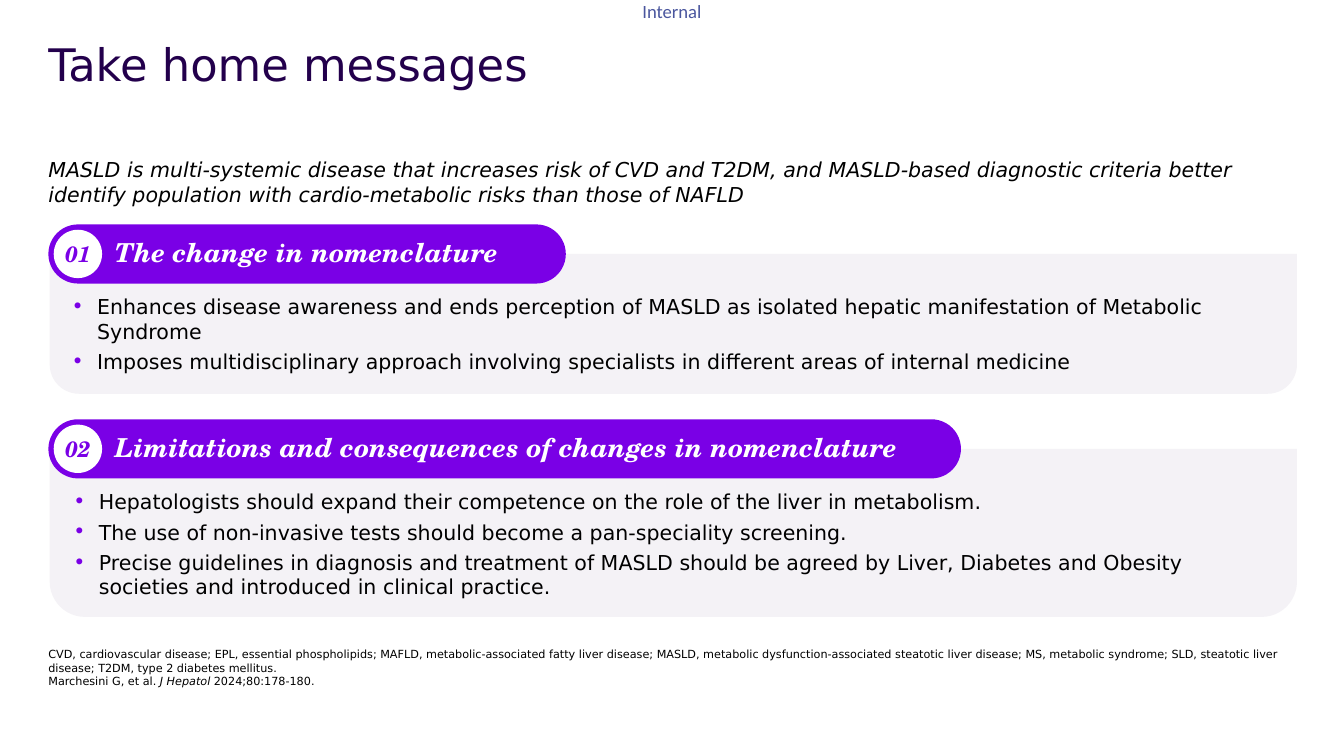
from lxml import etree
from pptx import Presentation
from pptx import util as u
from pptx.dml.color import RGBColor
from pptx.enum import shapes, text
from pptx.oxml import ns

THEME = {
    "purple": "7A00E6", "panel": "F4F2F6", "white": "FFFFFF",
    "title": {"name": "DejaVu Sans", "size": 24, "color": "23004C"},
    "label": {"name": "Calibri", "size": 10, "color": "4A569E"},
    "body": {"name": "DejaVu Sans", "size": 11, "color": "000000"},
    "note": {"name": "DejaVu Sans", "size": 6, "color": "000000"},
    "heading": {"name": "TeX Gyre Schola", "size": 14, "color": "FFFFFF", "bold": True, "italic": True},
    "number": {"name": "TeX Gyre Schola", "size": 12, "color": "7A00E6", "bold": True, "italic": True},
}


def write_text(shape, paragraphs, style, insets=(0, 0, 0, 0), anchor=text.MSO_ANCHOR.TOP,
               bullet=None, **paragraph_format):
    """Fill a shape with paragraphs, each a list of (words, run font values)."""
    frame = shape.text_frame
    frame.word_wrap, frame.auto_size = True, text.MSO_AUTO_SIZE.NONE
    frame.vertical_anchor = anchor
    for side, inset in zip(("left", "top", "right", "bottom"), insets):
        setattr(frame, f"margin_{side}", u.Inches(inset))
    for index, runs in enumerate(paragraphs):
        paragraph = frame.add_paragraph() if index else frame.paragraphs[0]
        values = {"alignment": text.PP_ALIGN.LEFT, "space_before": u.Pt(0), "space_after": u.Pt(0)}
        values.update(paragraph_format)
        for name, value in values.items():
            setattr(paragraph, name, value)
        # Bullet and hanging indent
        properties = paragraph._p.get_or_add_pPr()
        indent = u.Inches(0.19) if bullet else 0
        properties.set("marL", str(indent))
        properties.set("indent", str(-indent))
        if bullet:
            color = etree.SubElement(properties, ns.qn("a:buClr"))
            etree.SubElement(color, ns.qn("a:srgbClr"), val=THEME["purple"])
            etree.SubElement(properties, ns.qn("a:buFont"), typeface=style["name"])
            etree.SubElement(properties, ns.qn("a:buChar"), char=bullet)
        else:
            etree.SubElement(properties, ns.qn("a:buNone"))
        # Runs
        for words, changes in runs:
            run = paragraph.add_run()
            run.text = words
            for name, value in {"bold": False, "italic": False, **style, **changes}.items():
                if name == "color":
                    run.font.color.rgb = RGBColor.from_string(value)
                else:
                    setattr(run.font, name, u.Pt(value) if name == "size" else value)


def add_block(kind, box, color, adjustments=()):
    """Add a plain filled shape without line or shadow."""
    shape = slide.shapes.add_shape(kind, *map(u.Inches, box))
    shape.shadow.inherit = False
    shape.fill.solid()
    shape.fill.fore_color.rgb = RGBColor.from_string(color)
    shape.line.fill.background()
    for index, value in enumerate(adjustments):
        shape.adjustments[index] = value
    return shape


# Widescreen 16:9 slide
presentation = Presentation()
presentation.slide_width = u.Inches(10)
presentation.slide_height = u.Inches(10 * 9 / 16)
slide = presentation.slides.add_slide(presentation.slide_layouts[3])
title, intro, footnote = slide.placeholders

# Placeholders: title, introduction, footnote
for shape, box in (
    (title, (0.36, 0.32, 9.28, 0.79)),
    (intro, (0.36, 1.17, 9.27, 0.37)),
    (footnote, (0.36, 4.81, 9.27, 0.31)),
):
    shape.left, shape.top, shape.width, shape.height = map(u.Inches, box)

write_text(title, [[("Take home messages", {})]], THEME["title"], line_spacing=0.9)
write_text(intro, [[(
    "MASLD is multi-systemic disease that increases risk of CVD and T2DM, and MASLD-based "
    "diagnostic criteria better identify population with cardio-metabolic risks than those of NAFLD",
    {"italic": True})]], THEME["body"])
write_text(footnote, [
    [("CVD, cardiovascular disease; EPL, essential phospholipids; MAFLD, metabolic-associated fatty "
      "liver disease; MASLD, metabolic dysfunction-associated steatotic liver disease; MS, metabolic "
      "syndrome; SLD, steatotic liver disease; T2DM, type 2 diabetes mellitus.", {})],
    [("Marchesini G, et al. ", {}), ("J Hepatol", {"italic": True}), (" 2024;80:178-180.", {})],
], THEME["note"], anchor=text.MSO_ANCHOR.BOTTOM)

# Classification label
label = slide.shapes.add_textbox(*map(u.Inches, (4.78, 0, 0.47, 0.17)))
write_text(label, [[("Internal", {})]], THEME["label"])
label.text_frame.word_wrap = False

# Numbered sections: panel, heading pill, number disc
sections = [
    (1.67, 3.85, 1.04, "The change in nomenclature", [
        "Enhances disease awareness and ends perception of MASLD as isolated hepatic manifestation "
        "of Metabolic Syndrome",
        "Imposes multidisciplinary approach involving specialists in different areas of internal medicine",
    ]),
    (3.12, 6.79, 1.25, "Limitations and consequences of changes in nomenclature", [
        "Hepatologists should expand their competence on the role of the liver in metabolism.",
        "The use of non-invasive tests should become a pan-speciality screening.",
        "Precise guidelines in diagnosis and treatment of MASLD should be agreed by Liver, Diabetes "
        "and Obesity societies and introduced in clinical practice.",
    ]),
]
for number, (top, pill_width, panel_height, heading, points) in enumerate(sections, 1):
    panel = add_block(shapes.MSO_SHAPE.ROUND_2_SAME_RECTANGLE,
                      (0.37, top + 0.22, 9.28, panel_height), THEME["panel"], (0, 0.21))
    write_text(panel, [[(point, {})] for point in points], THEME["body"],
               (0.1, 0.3, 0.1, 0.05), bullet="•", space_after=u.Pt(3))

    pill = add_block(shapes.MSO_SHAPE.ROUNDED_RECTANGLE,
                     (0.36, top, pill_width, 0.44), THEME["purple"], (0.5,))
    write_text(pill, [[(heading, {})]], THEME["heading"], (0.43, 0.05, 0.1, 0.05),
               text.MSO_ANCHOR.MIDDLE, line_spacing=0.9)

    disc = add_block(shapes.MSO_SHAPE.OVAL, (0.4, top + 0.04, 0.36, 0.36), THEME["white"])
    write_text(disc, [[(f"{number:02}", {})]], THEME["number"], (0, 0.05, 0, 0.05),
               text.MSO_ANCHOR.MIDDLE, alignment=text.PP_ALIGN.CENTER)

presentation.save("out.pptx")
